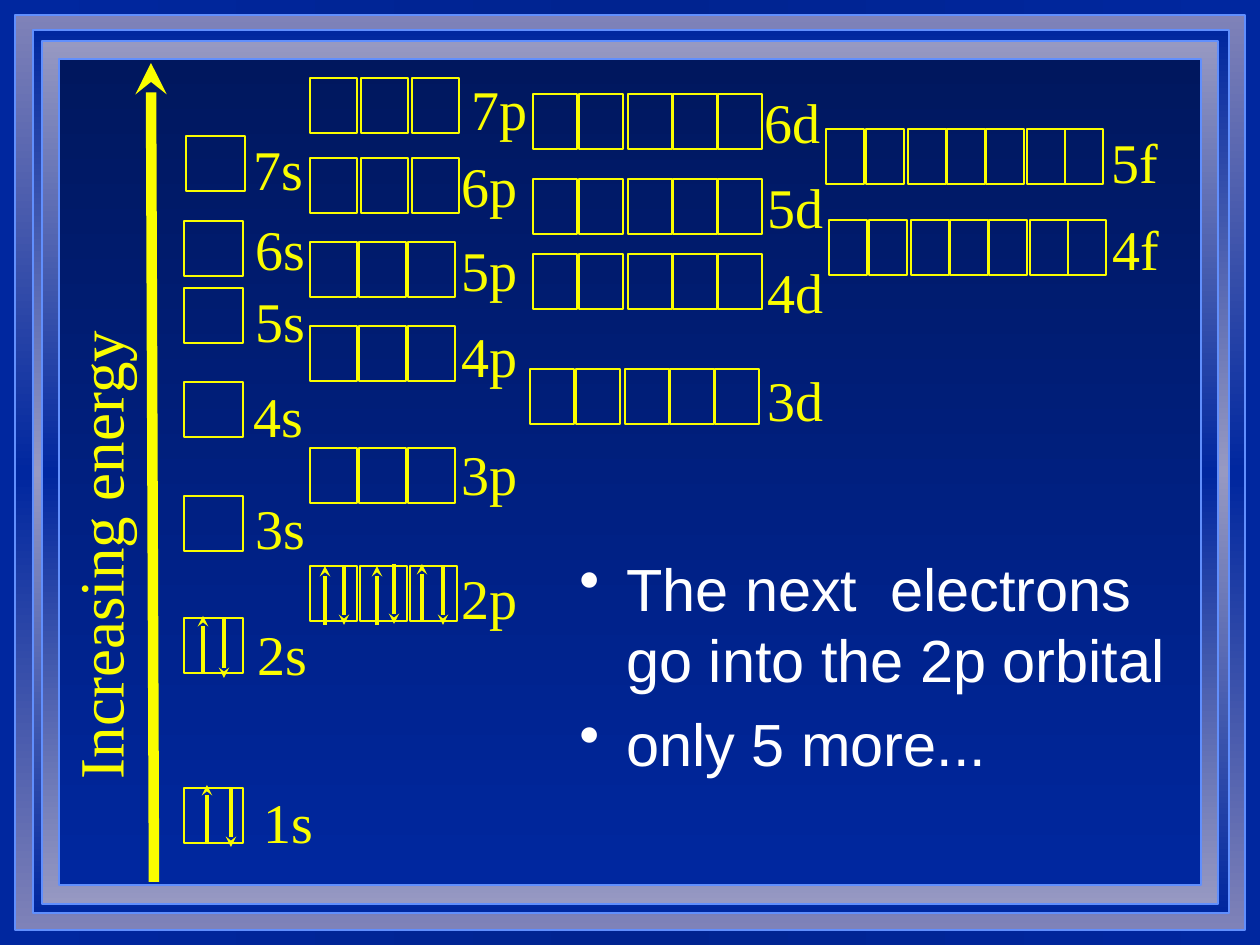
from dataclasses import dataclass

import pptx
import pptx.dml.color
import pptx.enum.shapes
import pptx.oxml
import pptx.oxml.ns
import pptx.util

PX = 914400 // 126
YELLOW, WHITE, NAVY, EDGE = "FAFD00", "FFFFFF", "00279F", "618FFD"
SERIF, SANS = "Times New Roman", "Arial"
qn = pptx.oxml.ns.qn


@dataclass
class Frame:
    left: int
    top: int
    width: int
    height: int
    stops: list[tuple[int, str]]


@dataclass
class Sublevel:
    label: str
    left: int
    top: int
    label_left: int
    label_top: int
    step: int = 49


@dataclass
class Spin:
    x: int
    tail_y: int
    tip_y: int


# Content
FRAMES = [
    Frame(15, 15, 1230, 915, [(0, "7F82B8"), (50, NAVY), (100, "7F82B8")]),
    Frame(33, 30, 1196, 883, [(0, NAVY), (50, "9799C2"), (100, NAVY)]),
    Frame(42, 41, 1176, 863, [(0, "9799C2"), (50, NAVY), (100, "9799C2")]),
    Frame(59, 59, 1142, 826, [(0, "00175E"), (100, NAVY)]),
]
SUBLEVELS = [
    Sublevel("1s", 184, 788, 251, 781),
    Sublevel("2s", 184, 618, 245, 613),
    Sublevel("3s", 184, 496, 243, 487),
    Sublevel("4s", 184, 382, 241, 375),
    Sublevel("5s", 184, 288, 243, 280),
    Sublevel("6s", 184, 221, 243, 208),
    Sublevel("7s", 186, 136, 241, 128),
    Sublevel("2p", 310, 566, 449, 557, 50),
    Sublevel("3p", 310, 448, 449, 433),
    Sublevel("4p", 310, 326, 449, 315),
    Sublevel("5p", 310, 242, 449, 229),
    Sublevel("6p", 310, 158, 449, 145, 51),
    Sublevel("7p", 310, 78, 459, 68, 51),
    Sublevel("3d", 530, 369, 755, 359),
    Sublevel("4d", 533, 254, 755, 251),
    Sublevel("5d", 533, 179, 755, 166),
    Sublevel("6d", 533, 94, 752, 81),
    Sublevel("4f", 829, 220, 1100, 208),
    Sublevel("5f", 826, 129, 1099, 121),
]
BOX_WIDTH = {"s": 59, "p": 47, "d": 44, "f": 38}
BOX_OFFSETS = {"s": [0], "d": [0, 46, 95, 140, 185],
               "f": [0, 40, 82, 121, 160, 201, 239]}
SPINS = [
    Spin(207, 844, 785), Spin(231, 788, 847),
    Spin(203, 674, 616), Spin(224, 619, 678),
    Spin(325, 625, 566), Spin(344, 567, 625),
    Spin(377, 625, 566), Spin(394, 564, 624),
    Spin(422, 622, 564), Spin(443, 567, 625),
]
BULLETS = ["The next  electrons go into the 2p orbital", "only 5 more..."]


def px(length: int) -> int:
    return pptx.util.Emu(length * PX)


def rgb(color: str) -> pptx.dml.color.RGBColor:
    return pptx.dml.color.RGBColor.from_string(color)


def set_gradient(fill, root, stops: list[tuple[int, str]], angle: int) -> None:
    fill.gradient()
    gradient = next(root.iter(qn("a:gradFill")))
    stop_list = gradient.find(qn("a:gsLst"))
    for old in list(stop_list):
        stop_list.remove(old)
    for position, color in stops:
        stop = pptx.oxml.ns  # namespace declarations for the new stop
        stop_list.append(pptx.oxml.parse_xml(
            f'<a:gs {stop.nsdecls("a")} pos="{position * 1000}">'
            f'<a:srgbClr val="{color}"/></a:gs>'))
    gradient.find(qn("a:lin")).set("ang", str(angle * 60000))


def add_rect(slide, left: int, top: int, width: int, height: int, edge: str):
    rect = slide.shapes.add_shape(pptx.enum.shapes.MSO_SHAPE.RECTANGLE,
                                  px(left), px(top), px(width), px(height))
    rect.shadow.inherit = False
    rect.fill.background()
    rect.line.color.rgb = rgb(edge)
    rect.line.width = pptx.util.Pt(1)
    return rect


def add_arrow(slide, tail: tuple[int, int], tip: tuple[int, int], width: int) -> None:
    arrow = slide.shapes.add_connector(pptx.enum.shapes.MSO_CONNECTOR.STRAIGHT,
                                       px(tail[0]), px(tail[1]), px(tip[0]), px(tip[1]))
    arrow.line.color.rgb = rgb(YELLOW)
    arrow.line.width = pptx.util.Pt(width)
    line = arrow.line._get_or_add_ln()
    line.append(pptx.oxml.parse_xml(
        f'<a:tailEnd {pptx.oxml.ns.nsdecls("a")} type="stealth"/>'))
    arrow._element.spPr.append(pptx.oxml.parse_xml(
        f'<a:effectLst {pptx.oxml.ns.nsdecls("a")}/>'))


def add_text(slide, left: int, top: int, width: int, height: int, lines: list[str],
             size: int, font: str, color: str, space_before: float = 0):
    box = slide.shapes.add_textbox(px(left), px(top), px(width), px(height))
    frame = box.text_frame
    frame.word_wrap = True
    for index, line in enumerate(lines):
        paragraph = frame.add_paragraph() if index else frame.paragraphs[0]
        paragraph.space_before = pptx.util.Pt(space_before)
        run = paragraph.add_run()
        run.text = line
        run.font.size = pptx.util.Pt(size)
        run.font.name = font
        run.font.color.rgb = rgb(color)
    return box


def add_bullets(box, indent: int) -> None:
    for paragraph in box.text_frame.paragraphs:
        properties = paragraph._p.get_or_add_pPr()
        properties.set("marL", str(px(indent)))
        properties.set("indent", str(-px(indent)))
        properties.append(pptx.oxml.parse_xml(
            f'<a:buChar {pptx.oxml.ns.nsdecls("a")} char="•"/>'))


def add_sublevel(slide, level: Sublevel) -> None:
    kind = level.label[-1]
    offsets = BOX_OFFSETS.get(kind, [0, level.step, 2 * level.step])
    for offset in offsets:
        add_rect(slide, level.left + offset, level.top, BOX_WIDTH[kind], 55, YELLOW)
    add_text(slide, level.label_left, level.label_top, 110 if kind == "s" else 87, 79,
             [level.label], 32, SERIF, YELLOW, 16)


def main() -> None:
    deck = pptx.Presentation()
    deck.slide_width, deck.slide_height = px(1260), px(945)
    slide = deck.slides.add_slide(deck.slide_layouts[6])

    # Background and nested frames
    set_gradient(slide.background.fill, slide._element,
                 [(0, NAVY), (50, "002390"), (100, NAVY)], 0)
    for frame in FRAMES:
        rect = add_rect(slide, frame.left, frame.top, frame.width, frame.height, EDGE)
        set_gradient(rect.fill, rect._element, frame.stops, 90)

    # Explanation
    explanation = add_text(slide, 567, 546, 621, 330, BULLETS, 34, SANS, WHITE, 6.8)
    add_bullets(explanation, 47)

    # Electrons
    for spin in SPINS:
        add_arrow(slide, (spin.x, spin.tail_y), (spin.x, spin.tip_y), 2)

    # Energy axis
    add_arrow(slide, (154, 882), (151, 63), 6)
    axis_title = add_text(slide, -194, 455, 585, 88, ["Increasing energy"],
                          36, SERIF, YELLOW)
    axis_title.rotation = 270

    # Orbitals
    for level in SUBLEVELS:
        add_sublevel(slide, level)

    deck.save("out.pptx")


if __name__ == "__main__":
    main()
